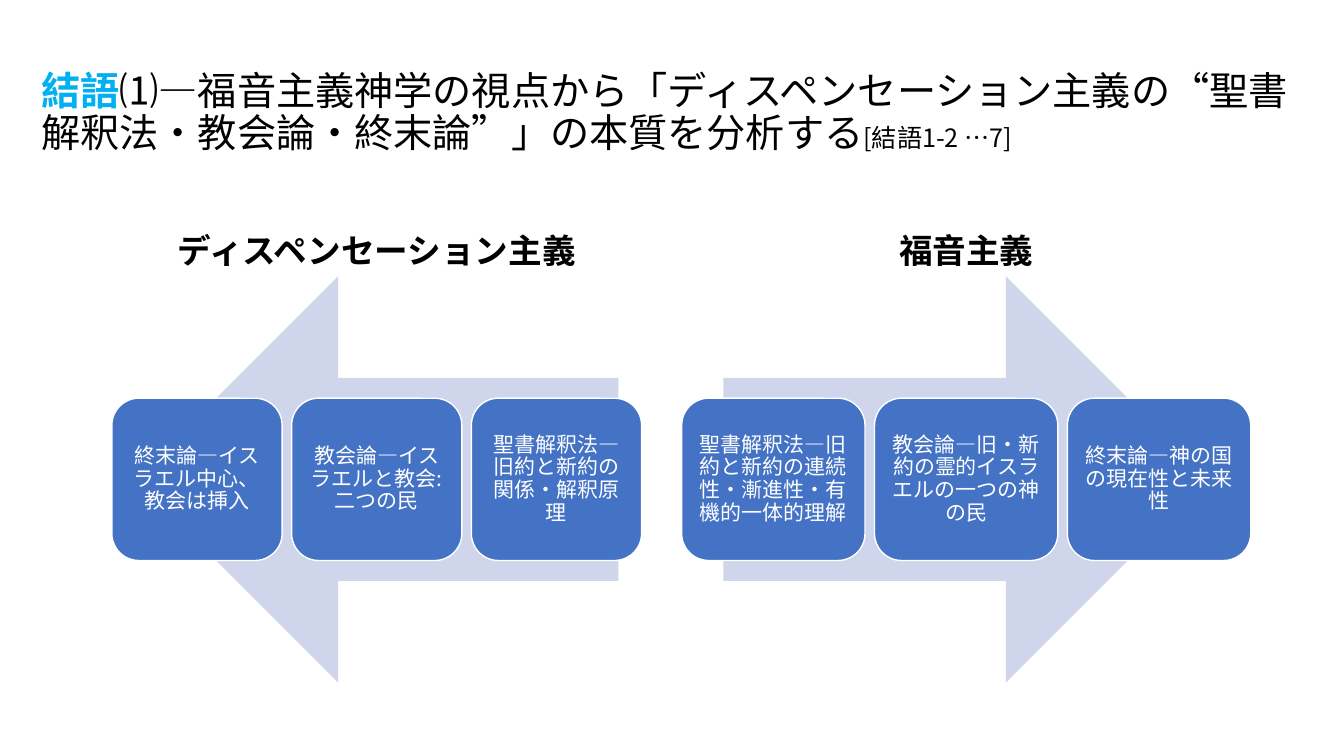
from dataclasses import dataclass

from lxml.etree import SubElement
from pptx import Presentation
from pptx.dml.color import RGBColor
from pptx.enum.shapes import MSO_SHAPE as Preset
from pptx.enum.text import MSO_ANCHOR as Anchor, MSO_AUTO_SIZE as AutoSize, PP_ALIGN as Align
from pptx.oxml.ns import qn
from pptx.util import Cm, Pt


@dataclass(frozen=True)
class Theme:
    """Fonts, colours and type sizes of the slide."""
    font: str = "Noto Sans CJK JP"
    text: str = "000000"
    accent: str = "00B0F0"
    arrow: str = "CFD5EA"
    card: str = "4472C4"
    white: str = "FFFFFF"
    title_size: int = 28
    reference_size: int = 18
    heading_size: int = 24
    card_size: int = 15


@dataclass(frozen=True)
class Box:
    """A region in centimetres."""
    left: float
    top: float
    width: float
    height: float

    def place(self, shape):
        """Move a shape into this region."""
        shape.left, shape.top = Cm(self.left), Cm(self.top)
        shape.width, shape.height = Cm(self.width), Cm(self.height)

    def lengths(self):
        """Return the region as slide lengths."""
        return Cm(self.left), Cm(self.top), Cm(self.width), Cm(self.height)


THEME = Theme()
HEADING_HEIGHT = 2.29
CARD_HEIGHT = 4.09
CARD_GAP = 0.24
ARROW_SHARE = 0.85


def format_run(run, size, color, bold=False):
    """Give a run its type size, colour, weight and font."""
    run.font.size, run.font.bold = Pt(size), bold
    run.font.color.rgb = RGBColor.from_string(color)
    run.font.name = THEME.font
    SubElement(run.font._element, qn("a:ea"), typeface=THEME.font)


def format_frame(text_frame, anchor, alignment):
    """Set wrapping, anchor, alignment and line spacing of a text frame."""
    text_frame.word_wrap = True
    text_frame.auto_size = AutoSize.NONE
    text_frame.vertical_anchor = anchor
    paragraph = text_frame.paragraphs[0]
    paragraph.alignment = alignment
    paragraph.line_spacing = 0.9
    return paragraph


def add_block(slide, preset, box, color):
    """Add a filled shape without outline or shadow."""
    shape = slide.shapes.add_shape(preset, *box.lengths())
    shape.shadow.inherit = False
    shape.fill.solid()
    shape.fill.fore_color.rgb = RGBColor.from_string(color)
    shape.line.fill.background()
    return shape


def fill_title(placeholder, box, parts):
    """Write the title from parts of text, size, colour and weight."""
    box.place(placeholder)
    paragraph = format_frame(placeholder.text_frame, Anchor.MIDDLE, Align.LEFT)
    for text, size, color, bold in parts:
        run = paragraph.add_run()
        run.text = text
        format_run(run, size, color, bold)


def add_card(slide, box, text):
    """Add one rounded card with centred text."""
    card = add_block(slide, Preset.ROUNDED_RECTANGLE, box, THEME.card)
    card.line.color.rgb = RGBColor.from_string(THEME.white)
    card.line.width = Pt(1)
    frame = card.text_frame
    frame.margin_left = frame.margin_right = frame.margin_top = frame.margin_bottom = Cm(0.15)
    frame.text = text
    paragraph = format_frame(frame, Anchor.MIDDLE, Align.CENTER)
    format_run(paragraph.runs[0], THEME.card_size, THEME.white)


def add_position(slide, placeholder, box, heading, cards, card_width, rotation):
    """Add a heading above an arrow that carries a row of cards."""
    Box(box.left, box.top, box.width, HEADING_HEIGHT).place(placeholder)
    placeholder.text_frame.text = heading
    paragraph = format_frame(placeholder.text_frame, Anchor.BOTTOM, Align.CENTER)
    paragraph.space_before = Pt(10)
    format_run(paragraph.runs[0], THEME.heading_size, THEME.text, True)

    center = box.left + box.width / 2
    arrow_width = box.width * ARROW_SHARE
    arrow_top = box.top + HEADING_HEIGHT
    arrow_height = box.height - HEADING_HEIGHT
    arrow_box = Box(center - arrow_width / 2, arrow_top, arrow_width, arrow_height)
    add_block(slide, Preset.RIGHT_ARROW, arrow_box, THEME.arrow).rotation = rotation

    step = card_width + CARD_GAP
    left = center - (len(cards) * step - CARD_GAP) / 2
    top = arrow_top + (arrow_height - CARD_HEIGHT) / 2
    for index, text in enumerate(cards):
        add_card(slide, Box(left + index * step, top, card_width, CARD_HEIGHT), text)


def build_comparison(presentation):
    """Build the slide that sets two positions side by side."""
    slide = presentation.slides.add_slide(presentation.slide_layouts[4])
    title, left_heading, left_body, right_heading, right_body = slide.placeholders
    for placeholder in (left_body, right_body):
        placeholder.element.getparent().remove(placeholder.element)

    fill_title(title, Box(0.79, 1.02, 32.23, 3.68), [
        ("結語", THEME.title_size, THEME.accent, True),
        ("⑴―福音主義神学の視点から「ディスペンセーション主義の“聖書解釈法・教会論・終末論”」の本質を分析する",
         THEME.title_size, THEME.text, False),
        ("[結語1-2 …7]", THEME.reference_size, THEME.text, False),
    ])
    add_position(
        slide, left_heading, Box(2.33, 4.67, 14.33, 12.53), "ディスペンセーション主義",
        ["終末論―イスラエル中心、教会は挿入",
         "教会論―イスラエルと教会:二つの民",
         "聖書解釈法―旧約と新約の関係・解釈原理"],
        card_width=4.29, rotation=180)
    add_position(
        slide, right_heading, Box(17.15, 4.67, 14.4, 12.53), "福音主義",
        ["聖書解釈法―旧約と新約の連続性・漸進性・有機的一体的理解",
         "教会論―旧・新約の霊的イスラエルの一つの神の民",
         "終末論―神の国の現在性と未来性"],
        card_width=4.62, rotation=0)


def main():
    """Create and save the presentation."""
    presentation = Presentation()
    presentation.slide_width, presentation.slide_height = Cm(33.87), Cm(19.05)
    build_comparison(presentation)
    presentation.save("out.pptx")


if __name__ == "__main__":
    main()
